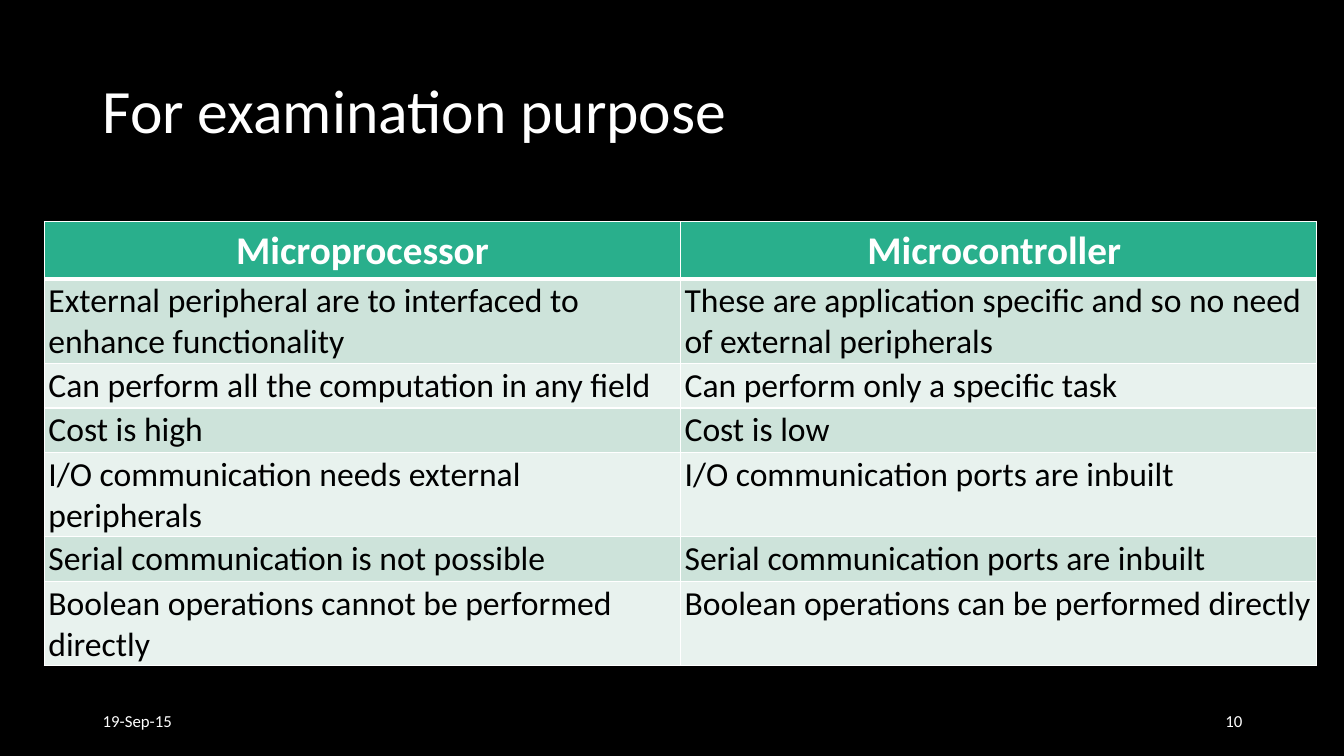
from lxml import etree
from pptx import Presentation
from pptx.dml.color import RGBColor
from pptx.enum.text import MSO_ANCHOR, PP_ALIGN
from pptx.oxml.ns import qn
from pptx.util import Inches, Pt

LEFT, CENTER, RIGHT = PP_ALIGN.LEFT, PP_ALIGN.CENTER, PP_ALIGN.RIGHT
MIDDLE = MSO_ANCHOR.MIDDLE
FONT = "Calibri"
COLORS = {
    "background": "000000",
    "light": "FFFFFF",
    "dark": "000000",
    "header": "29AF8C",
    "odd_row": "CDE3DA",
    "even_row": "E8F2EE",
}
COMPARISON = [
    ("Microprocessor", "Microcontroller "),
    ("External peripheral are to interfaced to enhance functionality",
     "These are application specific and so no need of external peripherals"),
    ("Can perform all the computation in any field",
     "Can perform only a specific task"),
    ("Cost is high", "Cost is low"),
    ("I/O communication needs external peripherals",
     "I/O communication ports are inbuilt"),
    ("Serial communication is not possible",
     "Serial communication ports are inbuilt"),
    ("Boolean operations cannot be performed directly",
     "Boolean operations can be performed directly"),
]


def color(name):
    return RGBColor.from_string(COLORS[name])


def write(frame, text, size, color_name, align=LEFT, bold=False):
    frame.text = text
    paragraph = frame.paragraphs[0]
    paragraph.alignment = align
    font = paragraph.runs[0].font
    font.name, font.size, font.bold = FONT, Pt(size), bold
    font.color.rgb = color(color_name)
    return paragraph


def add_label(slide, text, left, top, width, height, size, align=LEFT):
    box = slide.shapes.add_textbox(
        Inches(left), Inches(top), Inches(width), Inches(height))
    frame = box.text_frame
    frame.word_wrap = True
    frame.vertical_anchor = MIDDLE
    return write(frame, text, size, "light", align)


def add_borders(cell, widths):
    """Draw light cell borders; widths maps the sides L, R, T, B to points."""
    properties = cell._tc.get_or_add_tcPr()
    for side, width in widths.items():
        line = etree.SubElement(properties, qn(f"a:ln{side}"), w=str(Pt(width)))
        fill = etree.SubElement(line, qn("a:solidFill"))
        etree.SubElement(fill, qn("a:srgbClr"), val=COLORS["light"])


def fill_cell(cell, text, row):
    is_header = row == 0
    add_borders(cell, {"L": 1, "R": 1, "T": 3 if row == 1 else 1,
                       "B": 3 if is_header else 1})
    if is_header:
        fill_name = "header"
        write(cell.text_frame, text, 28, "light", CENTER, bold=True)
    else:
        fill_name = "odd_row" if row % 2 else "even_row"
        cell.margin_left = cell.margin_right = Inches(0.04)
        cell.margin_top = cell.margin_bottom = Inches(0.02)
        write(cell.text_frame, text, 24, "dark")
    cell.fill.solid()
    cell.fill.fore_color.rgb = color(fill_name)


def add_comparison(slide):
    row_height = 0.41
    table = slide.shapes.add_table(
        len(COMPARISON), 2, Inches(0.44), Inches(2.2),
        Inches(12.62), Inches(row_height * len(COMPARISON))).table
    for row, texts in enumerate(COMPARISON):
        table.rows[row].height = Inches(row_height)
        for column, text in enumerate(texts):
            fill_cell(table.cell(row, column), text, row)


def main():
    presentation = Presentation()
    presentation.slide_width = Inches(13.33)
    presentation.slide_height = Inches(7.5)
    slide = presentation.slides.add_slide(presentation.slide_layouts[6])
    slide.background.fill.solid()
    slide.background.fill.fore_color.rgb = color("background")

    title = add_label(slide, "For examination purpose", 0.92, 0.4, 11.5, 1.45, 44)
    title.line_spacing = 0.9
    add_comparison(slide)
    add_label(slide, "19-Sep-15", 0.92, 6.95, 3, 0.4, 12)
    add_label(slide, "10", 9.42, 6.95, 3, 0.4, 12, RIGHT)
    presentation.save("out.pptx")


if __name__ == "__main__":
    main()
